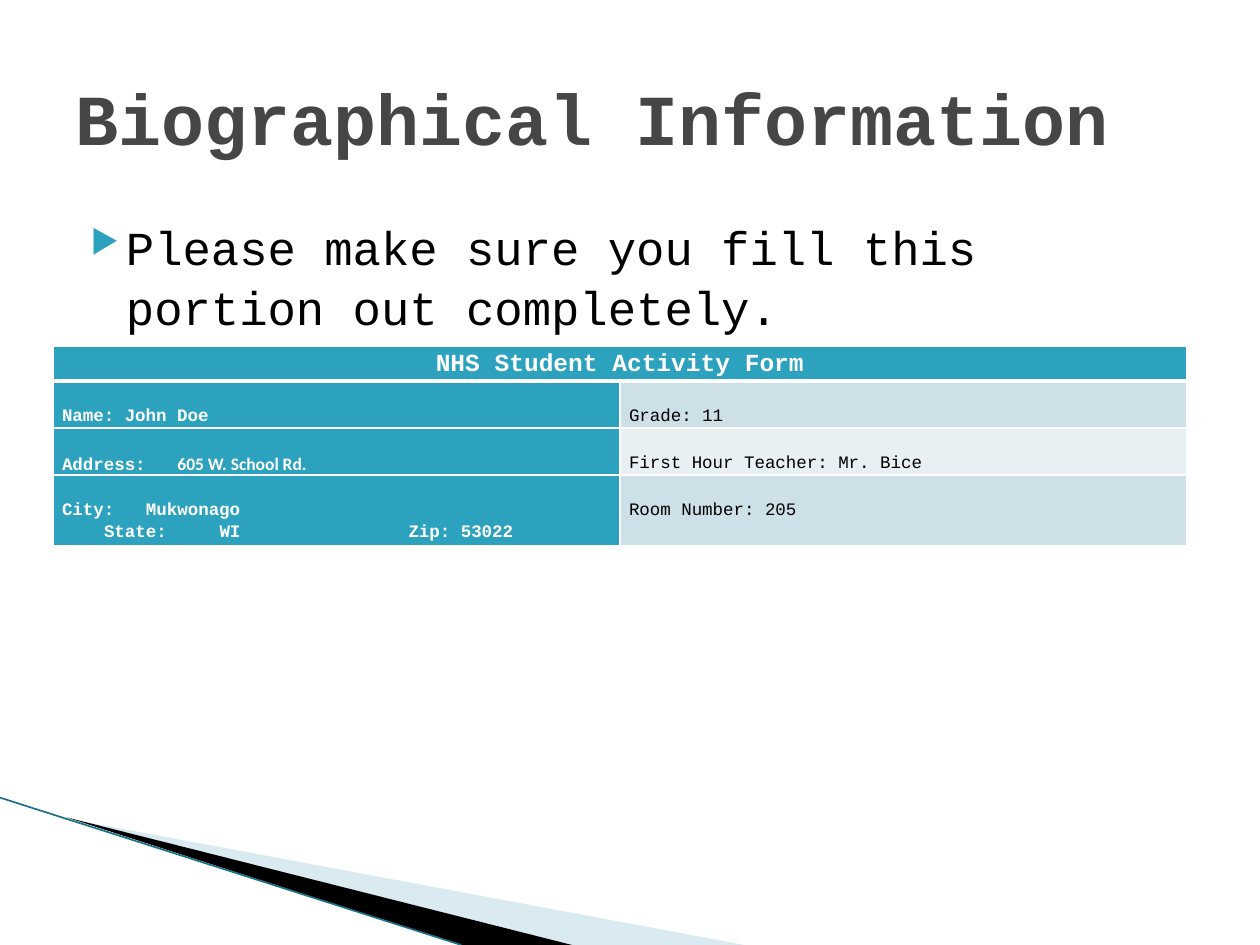
from lxml.etree import SubElement
from pptx import Presentation
from pptx.dml.color import RGBColor
from pptx.enum.shapes import MSO_CONNECTOR
from pptx.enum.text import MSO_ANCHOR, PP_ALIGN
from pptx.oxml.ns import qn
from pptx.util import Cm, Pt

THEME = {
    "font": "Courier New", "address_font": "Calibri",
    "title": "464646", "text": "000000", "white": "FFFFFF",
    "accent": "2DA2BF", "band": "CDE0E8", "light_band": "E8F0F4",
    "wedge": "A0CBDC", "edge": "1B7186",
    "title_size": 41, "body_size": 27, "header_size": 14, "cell_size": 10,
}

# Content: a paragraph is a list of (text, font) runs; tabs align the values
TITLE = "Biographical Information"
REQUEST = "Please make sure you fill this portion out completely."
FORM_TITLE = "NHS Student Activity Form"
MONO = THEME["font"]
# Each row: left paragraphs with their tab stops (in characters), right text
FORM_ROWS = [
    ([([("Name: John Doe", MONO)], [])], "Grade: 11"),
    ([([("Address:\t", MONO), ("605 W. School Rd.", THEME["address_font"])], [11])],
     "First Hour Teacher: Mr. Bice"),
    ([([("City:\tMukwonago", MONO)], [8]),
      ([("\tState:\tWI\tZip: 53022", MONO)], [4, 15, 33])],
     "Room Number: 205"),
]

# Layout, in centimetres
TABLE_BOX = (1.07, 6.99, 22.86)
HEADER_HEIGHT = 0.69
ROW_HEIGHTS = [0.94, 0.94, 1.37]
CELL_TOP = 0.46
CHARACTER_WIDTH = Pt(THEME["cell_size"] * 0.6)
PALE_WEDGE = [(1.4, 16.51), (15.11, 19.07), (11.58, 19.07)]
DARK_WEDGE = [(1.35, 16.48), (11.61, 19.07), (9.45, 19.1)]
EDGE = [(0, 16.08), (9.3, 19.05)]


def color(name):
    return RGBColor.from_string(THEME[name])


def write(paragraph, text, *, size, fill="text", bold=False, font=MONO,
          align=PP_ALIGN.LEFT, spacing=1.0):
    run = paragraph.add_run()
    run.text = text
    run.font.name, run.font.size, run.font.bold = font, Pt(size), bold
    run.font.color.rgb = color(fill)
    paragraph.alignment = align
    paragraph.line_spacing = spacing


def add_tabs(paragraph, stops):
    if stops:
        tabs = SubElement(paragraph._p.get_or_add_pPr(), qn("a:tabLst"))
        for stop in stops:
            SubElement(tabs, qn("a:tab"), pos=str(int(stop * CHARACTER_WIDTH)), algn="l")


def add_bullet(paragraph, character, fill, percent):
    properties = paragraph._p.get_or_add_pPr()
    properties.set("marL", str(Cm(1.02)))
    properties.set("indent", str(-Cm(0.71)))
    bullet_color = SubElement(properties, qn("a:buClr"))
    SubElement(bullet_color, qn("a:srgbClr"), val=THEME[fill])
    SubElement(properties, qn("a:buSzPct"), val=str(percent * 1000))
    SubElement(properties, qn("a:buChar"), char=character)


def add_wedge(slide, points, fill, opacity=100):
    start, *others = [(Cm(x), Cm(y)) for x, y in points]
    builder = slide.shapes.build_freeform(*start, scale=1.0)
    builder.add_line_segments(others, close=True)
    shape = builder.convert_to_shape()
    shape.shadow.inherit = False
    shape.fill.solid()
    shape.fill.fore_color.rgb = color(fill)
    shape.line.fill.background()
    if opacity < 100:
        rgb = shape._element.spPr.find(qn("a:solidFill")).find(qn("a:srgbClr"))
        SubElement(rgb, qn("a:alpha"), val=str(opacity * 1000))


def style_cell(cell, fill, top=0.0, bottom_line=1):
    cell.margin_left = cell.margin_right = Cm(0.18)
    cell.margin_top, cell.margin_bottom = Cm(top), 0
    properties = cell._tc.get_or_add_tcPr()
    for side, width in (("L", 1), ("R", 1), ("T", 1), ("B", bottom_line)):
        line = SubElement(properties, qn(f"a:ln{side}"), w=str(Pt(width)))
        SubElement(SubElement(line, qn("a:solidFill")), qn("a:srgbClr"), val=THEME["white"])
    cell.fill.solid()
    cell.fill.fore_color.rgb = color(fill)


def add_form(slide):
    left, top, width = TABLE_BOX
    heights = [HEADER_HEIGHT, *ROW_HEIGHTS]
    table = slide.shapes.add_table(len(heights), 2, Cm(left), Cm(top),
                                   Cm(width), Cm(sum(heights))).table
    for row, height in zip(table.rows, heights):
        row.height = Cm(height)

    # Header across both columns
    for column in range(2):
        style_cell(table.cell(0, column), "accent", bottom_line=3)
    header = table.cell(0, 0)
    header.merge(table.cell(0, 1))
    write(header.text_frame.paragraphs[0], FORM_TITLE, size=THEME["header_size"],
          fill="white", bold=True, align=PP_ALIGN.CENTER, spacing=1.15)

    # Student details on the left, class details on the right
    for index, (details, class_detail) in enumerate(FORM_ROWS, start=1):
        student, school = table.cell(index, 0), table.cell(index, 1)
        style_cell(student, "accent", CELL_TOP, bottom_line=1)
        style_cell(school, "band" if index % 2 else "light_band", CELL_TOP)
        frame = student.text_frame
        for number, (runs, stops) in enumerate(details):
            paragraph = frame.add_paragraph() if number else frame.paragraphs[0]
            paragraph.line_spacing = 1.15
            add_tabs(paragraph, stops)
            for text, font in runs:
                write(paragraph, text, size=THEME["cell_size"], fill="white",
                      bold=True, font=font, spacing=1.15)
        write(school.text_frame.paragraphs[0], class_detail,
              size=THEME["cell_size"], spacing=1.15)


def main():
    presentation = Presentation()
    presentation.slide_width, presentation.slide_height = Cm(25.4), Cm(19.05)
    slide = presentation.slides.add_slide(presentation.slide_layouts[5])

    # Corner decoration
    add_wedge(slide, PALE_WEDGE, "wedge", opacity=40)
    add_wedge(slide, DARK_WEDGE, "text")
    (x1, y1), (x2, y2) = EDGE
    edge = slide.shapes.add_connector(MSO_CONNECTOR.STRAIGHT, Cm(x1), Cm(y1), Cm(x2), Cm(y2))
    edge.line.color.rgb = color("edge")
    edge.line.width = Pt(0.95)
    SubElement(edge._element.spPr, qn("a:effectLst"))

    # Title
    title = slide.shapes.title
    title.left, title.top, title.width, title.height = Cm(1.27), Cm(0.76), Cm(22.86), Cm(3.18)
    title.text_frame.vertical_anchor = MSO_ANCHOR.MIDDLE
    write(title.text_frame.paragraphs[0], TITLE, size=THEME["title_size"],
          fill="title", bold=True)

    # Request
    body = slide.shapes.add_textbox(Cm(1.27), Cm(4.19), Cm(22.86), Cm(12.5))
    body.text_frame.word_wrap = True
    paragraph = body.text_frame.paragraphs[0]
    paragraph.line_spacing = 1.07
    add_bullet(paragraph, "▶", "accent", 68)
    write(paragraph, REQUEST, size=THEME["body_size"], spacing=1.07)

    add_form(slide)
    presentation.save("out.pptx")


if __name__ == "__main__":
    main()
